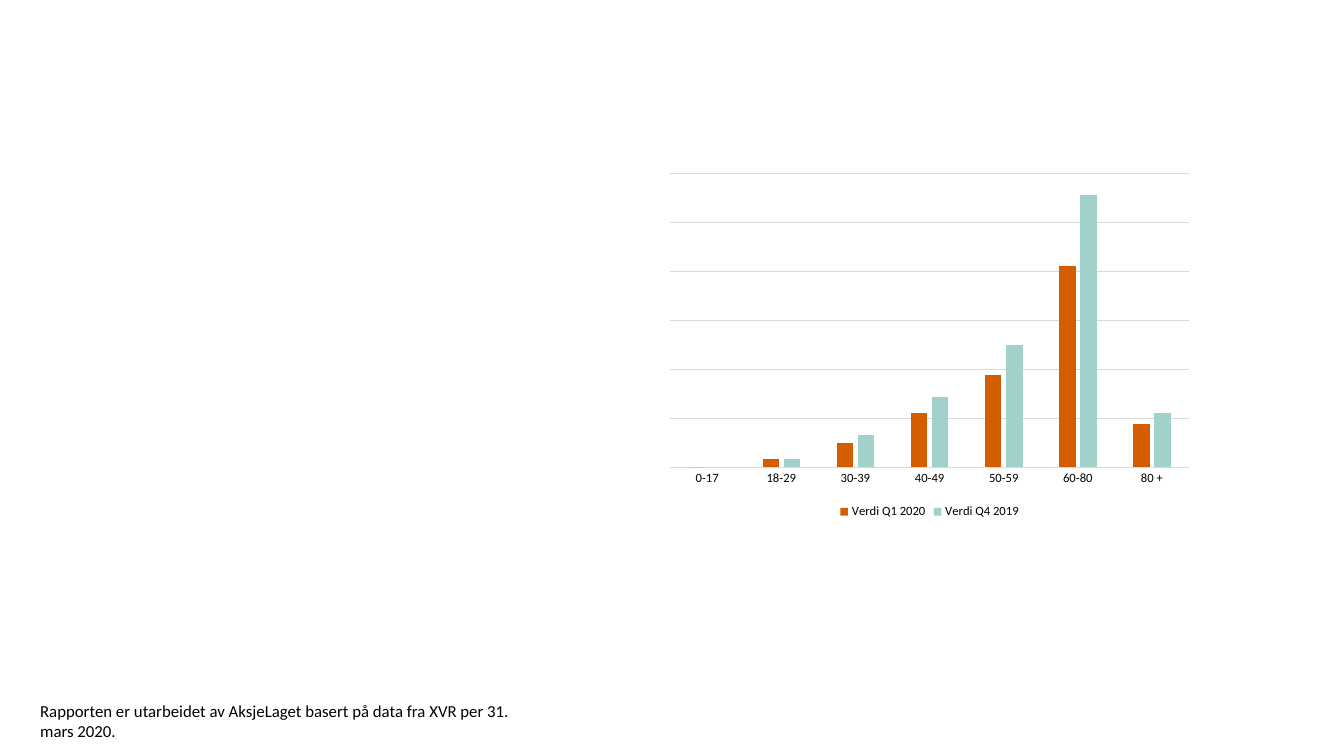
from lxml import etree
from pptx import Presentation
from pptx.chart.data import CategoryChartData
from pptx.dml.color import RGBColor
from pptx.enum import chart as ch, text
from pptx.oxml.ns import qn
from pptx.util import Inches, Pt

FONT = "Calibri"
BLACK, GREY, WHITE = "000000", "D9D9D9", "FFFFFF"
AGES = ["0-17", "18-29", "30-39", "40-49", "50-59", "60-80", "80 +"]
SERIES = [
    ("Verdi Q1 2020", [0, 3, 9, 20, 34, 74, 16], "D45D00"),
    ("Verdi Q4 2019", [0, 3, 12, 26, 45, 100, 20], "A0D1CA"),
]
NUMBER_FORMAT = '_-* #,##0_-;\\-* #,##0_-;_-* "-"??_-;_-@_'


def rgb(color):
    return RGBColor.from_string(color)


def set_font(font, size, color=BLACK):
    font.name, font.size = FONT, Pt(size)
    font.color.rgb = rgb(color)


def set_line(line, color, width=0.75):
    line.color.rgb = rgb(color)
    line.width = Pt(width)


def add_text(slide, content, *, left, top, width, height, size, color=BLACK):
    tf = slide.shapes.add_textbox(
        Inches(left), Inches(top), Inches(width), Inches(height)).text_frame
    tf.word_wrap = True
    tf.auto_size = text.MSO_AUTO_SIZE.SHAPE_TO_FIT_TEXT
    r = tf.paragraphs[0].add_run()
    r.text = content
    set_font(r.font, size, color)


def fill_background(chart, color):
    """Fill the chart area and leave it without a border."""
    sp_pr = etree.Element(qn("c:spPr"))
    fill = etree.SubElement(sp_pr, qn("a:solidFill"))
    etree.SubElement(fill, qn("a:srgbClr"), val=color)
    line = etree.SubElement(sp_pr, qn("a:ln"))
    etree.SubElement(line, qn("a:noFill"))
    chart.element.find(qn("c:txPr")).addprevious(sp_pr)


def format_axes(chart):
    ages = chart.category_axis
    ages.major_tick_mark = ch.XL_TICK_MARK.NONE
    ages.has_major_gridlines = False
    set_font(ages.tick_labels.font, 9)
    set_line(ages.format.line, GREY)

    values = chart.value_axis
    values.minimum_scale, values.maximum_scale, values.major_unit = 0, 108, 18
    values.has_major_gridlines = True
    set_line(values.major_gridlines.format.line, GREY)
    values.tick_labels.number_format = NUMBER_FORMAT
    values.tick_labels.number_format_is_linked = False
    values.visible = False


def add_column_chart(slide, left, top, width, height):
    data = CategoryChartData()
    data.categories = AGES
    for name, values, _ in SERIES:
        data.add_series(name, values)
    chart = slide.shapes.add_chart(
        ch.XL_CHART_TYPE.COLUMN_CLUSTERED, Inches(left), Inches(top),
        Inches(width), Inches(height), data).chart
    chart.has_title = False
    set_font(chart.font, 10)
    fill_background(chart, WHITE)
    format_axes(chart)

    plot = chart.plots[0]
    plot.gap_width, plot.overlap = 219, -27
    plot.vary_by_categories = False
    for series, (_, _, color) in zip(plot.series, SERIES):
        series.format.fill.solid()
        series.format.fill.fore_color.rgb = rgb(color)

    chart.has_legend = True
    chart.legend.position = ch.XL_LEGEND_POSITION.BOTTOM
    chart.legend.include_in_layout = False
    set_font(chart.legend.font, 9)


def main():
    prs = Presentation()
    prs.slide_width, prs.slide_height = Inches(13.33), Inches(7.5)
    slide = prs.slides.add_slide(prs.slide_layouts[6])
    add_column_chart(slide, 6.54, 1.65, 5.36, 3.54)
    add_text(slide, "Rapporten er utarbeidet av AksjeLaget basert på data "
             "fra XVR per 31. mars 2020.",
             left=0.3, top=6.9, width=4.87, height=0.5, size=12)
    prs.save("out.pptx")


if __name__ == "__main__":
    main()
